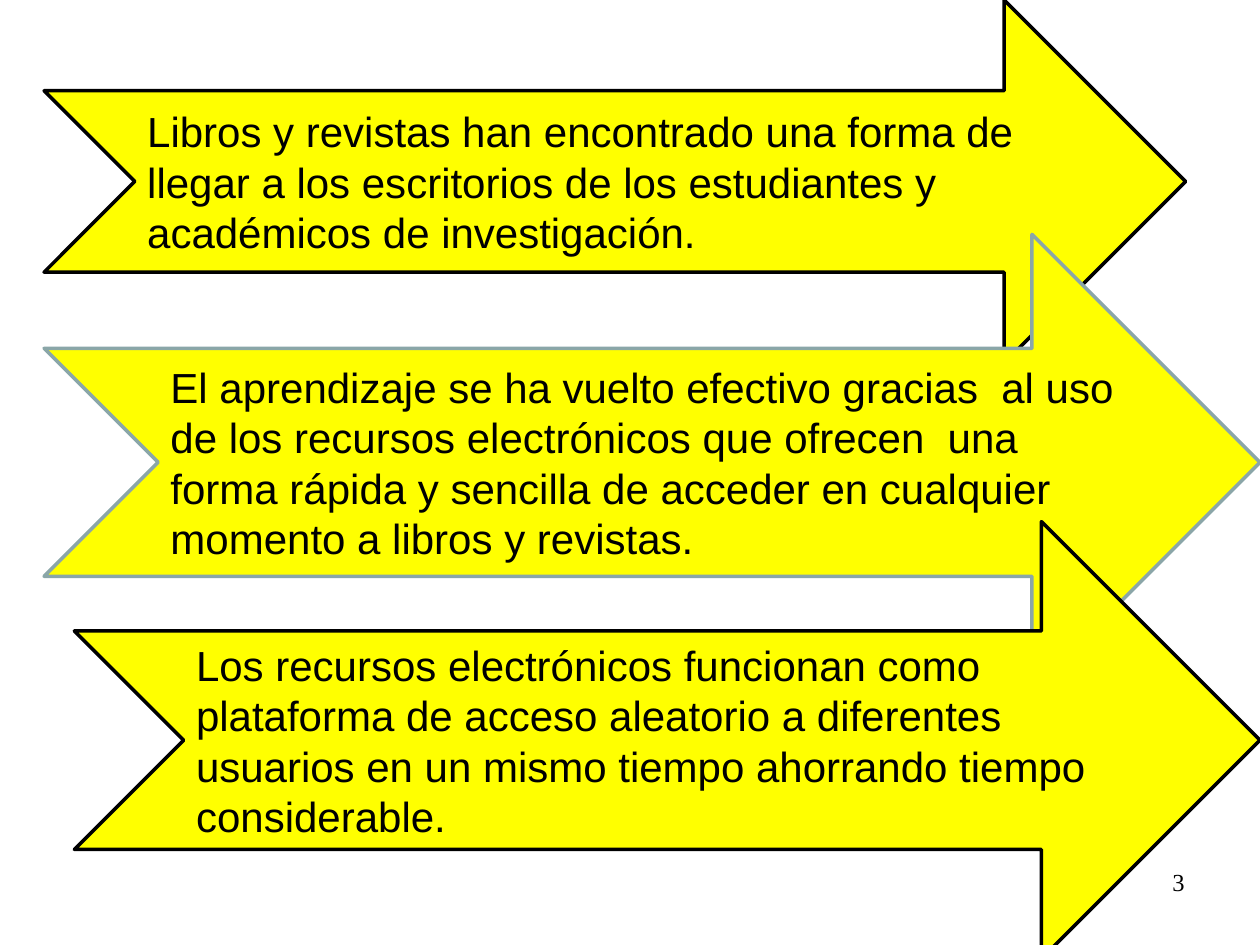
import pptx
import pptx.util
import pptx.dml.color
import pptx.enum.shapes
import pptx.enum.text

Pt = pptx.util.Pt
RGB = pptx.dml.color.RGBColor
ALIGN = pptx.enum.text.PP_ALIGN
ANCHOR = pptx.enum.text.MSO_ANCHOR

YELLOW = RGB(0xFF, 0xFF, 0x00)
BLACK = RGB(0x00, 0x00, 0x00)
GREY = RGB(0x8A, 0xA6, 0xA8)

# Box (left, top, width, height) in points, line colour, text
ARROWS = [
    ((25.2, 0, 652.3, 207.4), BLACK,
     "Libros y revistas han encontrado una forma de llegar a los "
     "escritorios de los estudiantes y académicos de investigación."),
    ((25.2, 133.9, 694.8, 260.6), GREY,
     "El aprendizaje se ha vuelto efectivo gracias  al uso de los recursos "
     "electrónicos que ofrecen  una forma rápida y sencilla de acceder en "
     "cualquier momento a libros y revistas."),
    ((42.5, 298.1, 677.5, 249.8), BLACK,
     "Los recursos electrónicos funcionan como plataforma de acceso "
     "aleatorio a diferentes usuarios en un mismo tiempo ahorrando tiempo "
     "considerable."),
]
NUMBER_BOX = (516.2, 491.8, 167.8, 37.4)


def write(shape, text, font, size, align, anchor):
    frame = shape.text_frame
    frame.word_wrap = True
    frame.vertical_anchor = anchor
    para = frame.paragraphs[0]
    para.alignment = align
    run = para.add_run()
    run.text = text
    run.font.name = font
    run.font.size = Pt(size)
    run.font.color.rgb = BLACK


def add_arrow(slide, box, color, text):
    kind = pptx.enum.shapes.MSO_SHAPE.NOTCHED_RIGHT_ARROW
    arrow = slide.shapes.add_shape(kind, *map(Pt, box))
    arrow.shadow.inherit = False
    arrow.fill.solid()
    arrow.fill.fore_color.rgb = YELLOW
    arrow.line.color.rgb = color
    arrow.line.width = Pt(2)
    write(arrow, text, "Arial", 24, ALIGN.LEFT, ANCHOR.MIDDLE)


def add_number(slide, box, text):
    label = slide.shapes.add_textbox(*map(Pt, box))
    write(label, text, "Times New Roman", 14, ALIGN.RIGHT, ANCHOR.TOP)


def main():
    deck = pptx.Presentation()
    deck.slide_width, deck.slide_height = Pt(720), Pt(540)
    slide = deck.slides.add_slide(deck.slide_layouts[6])
    add_number(slide, NUMBER_BOX, "3")
    for box, color, text in ARROWS:
        add_arrow(slide, box, color, text)
    deck.save("out.pptx")


if __name__ == "__main__":
    main()
